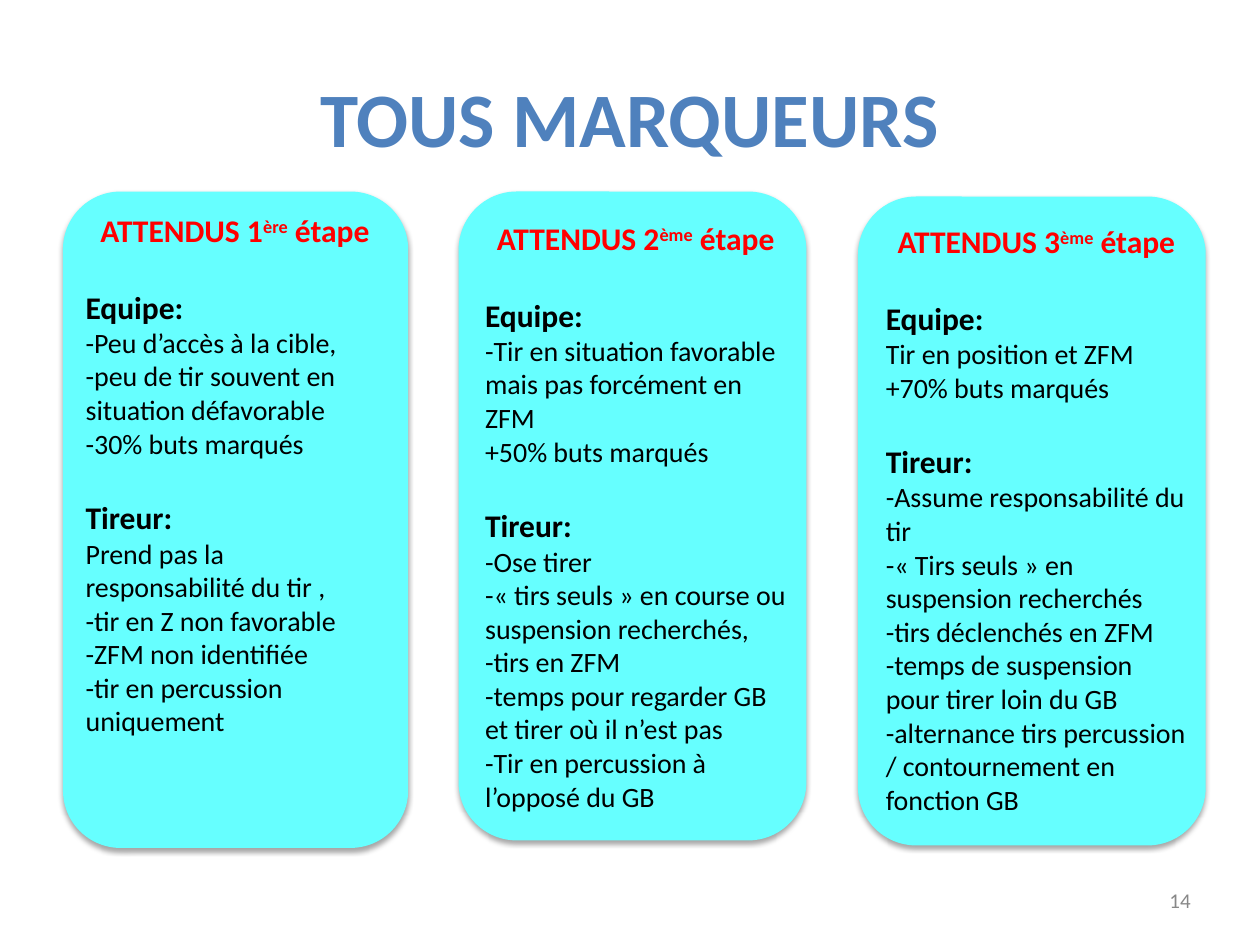
from lxml import etree
from pptx import Presentation
from pptx.dml.color import RGBColor
from pptx.enum.shapes import MSO_SHAPE
from pptx.enum.text import MSO_ANCHOR, PP_ALIGN
from pptx.oxml.ns import qn
from pptx.util import Inches, Pt

ROUNDED = MSO_SHAPE.ROUNDED_RECTANGLE
MIDDLE = MSO_ANCHOR.MIDDLE
LEFT, CENTER, RIGHT = PP_ALIGN.LEFT, PP_ALIGN.CENTER, PP_ALIGN.RIGHT
BLUE = RGBColor(0x4F, 0x81, 0xBD)
CYAN = RGBColor(0x66, 0xFF, 0xFF)
RED = RGBColor(0xFF, 0x00, 0x00)
BLACK = RGBColor(0x00, 0x00, 0x00)
GREY = RGBColor(0x88, 0x88, 0x88)
FONT = "Calibri"
SECTION_GAP = Pt(22)

STEPS = [
    {
        "card": (0.5, 1.52, 2.74, 5.21),
        "text": (0.63, 1.59, 2.47, 4.35),
        "number": "1",
        "suffix": "ère",
        "Equipe:": [
            "-Peu d’accès à la cible,",
            "-peu de tir souvent en situation défavorable\v-30% buts marqués",
        ],
        "Tireur:": [
            "Prend pas la responsabilité du tir ,",
            "-tir en Z non favorable",
            "-ZFM non identifiée",
            "-tir en percussion uniquement",
        ],
    },
    {
        "card": (3.64, 1.52, 2.76, 5.15),
        "text": (3.8, 1.67, 2.49, 4.85),
        "number": "2",
        "suffix": "ème",
        "Equipe:": [
            "-Tir en situation favorable mais pas forcément en ZFM",
            "+50% buts marqués",
        ],
        "Tireur:": [
            "-Ose tirer",
            "-« tirs seuls » en course ou suspension recherchés,",
            "-tirs en ZFM",
            "-temps pour regarder GB et tirer où il n’est pas",
            "-Tir en percussion à l’opposé du GB",
        ],
    },
    {
        "card": (6.81, 1.56, 2.76, 5.15),
        "text": (6.98, 1.56, 2.49, 5.12),
        "number": "3",
        "suffix": "ème",
        "Equipe:": ["Tir en position et ZFM\v+70% buts marqués"],
        "Tireur:": [
            "-Assume responsabilité du tir",
            "-« Tirs seuls » en suspension recherchés",
            "-tirs déclenchés en ZFM",
            "-temps de suspension pour tirer loin du GB",
            "-alternance tirs percussion / contournement en fonction GB",
        ],
    },
]


def style(para, size, color, bold=False, align=LEFT):
    """Set the alignment and font of a paragraph."""
    para.alignment = align
    font = para.font
    font.name, font.size, font.bold = FONT, Pt(size), bold
    font.color.rgb = color


def add_box(shapes, place, wrap=True):
    """Add a middle-anchored text box and return its text frame."""
    frame = shapes.add_textbox(*map(Inches, place)).text_frame
    frame.word_wrap = wrap
    frame.vertical_anchor = MIDDLE
    frame.margin_left = frame.margin_right = Inches(0.05)
    frame.margin_top = frame.margin_bottom = Inches(0.05)
    return frame


def add_label(page, place, text, size, color, bold, align, wrap=True):
    """Add a single-line text box."""
    para = add_box(page.shapes, place, wrap).paragraphs[0]
    para.text = text
    style(para, size, color, bold, align)


def add_shadow(shape):
    """Give a shape a soft shadow that falls straight down."""
    shape.shadow.inherit = False
    effects = shape.element.spPr.find(qn("a:effectLst"))
    shadow = etree.SubElement(
        effects, qn("a:outerShdw"), blurRad=str(Pt(3)), dist=str(Pt(1.8)),
        dir="5400000", rotWithShape="0")
    color = etree.SubElement(shadow, qn("a:srgbClr"), val="000000")
    etree.SubElement(color, qn("a:alpha"), val="35000")


def add_card(shapes, place):
    """Add a rounded cyan card."""
    card = shapes.add_shape(ROUNDED, *map(Inches, place))
    card.adjustments[0] = 0.167
    card.fill.solid()
    card.fill.fore_color.rgb = CYAN
    card.line.fill.background()
    add_shadow(card)


def add_heading(para, number, suffix):
    """Write a step heading with its ordinal suffix raised."""
    para.add_run().text = f"ATTENDUS {number}"
    span = para.add_run()
    span.text = suffix
    span.font._element.set("baseline", "30000")
    para.add_run().text = " étape"
    style(para, 18, RED, True, CENTER)


def add_section(frame, title, lines):
    """Write a bold section title and the lines below it."""
    para = frame.add_paragraph()
    para.text = title
    para.space_before = SECTION_GAP
    style(para, 18, BLACK, True)
    for line in lines:
        para = frame.add_paragraph()
        para.text = line
        style(para, 16, BLACK)


def add_step(page, step):
    """Add one step as a group of card and text."""
    shapes = page.shapes.add_group_shape().shapes
    add_card(shapes, step["card"])
    frame = add_box(shapes, step["text"])
    add_heading(frame.paragraphs[0], step["number"], step["suffix"])
    for title in ("Equipe:", "Tireur:"):
        add_section(frame, title, step[title])


def main():
    """Build the slide and save the deck."""
    deck = Presentation()
    deck.slide_width, deck.slide_height = Inches(10), Inches(7.5)
    page = deck.slides.add_slide(deck.slide_layouts[6])
    add_label(page, (0.5, 0.3, 9, 1.25), "TOUS MARQUEURS", 44, BLUE, True, CENTER)
    for step in STEPS:
        add_step(page, step)
    add_label(page, (9.22, 7, 0.28, 0.29), "14", 12, GREY, False, RIGHT, wrap=False)
    deck.save("out.pptx")


if __name__ == "__main__":
    main()
